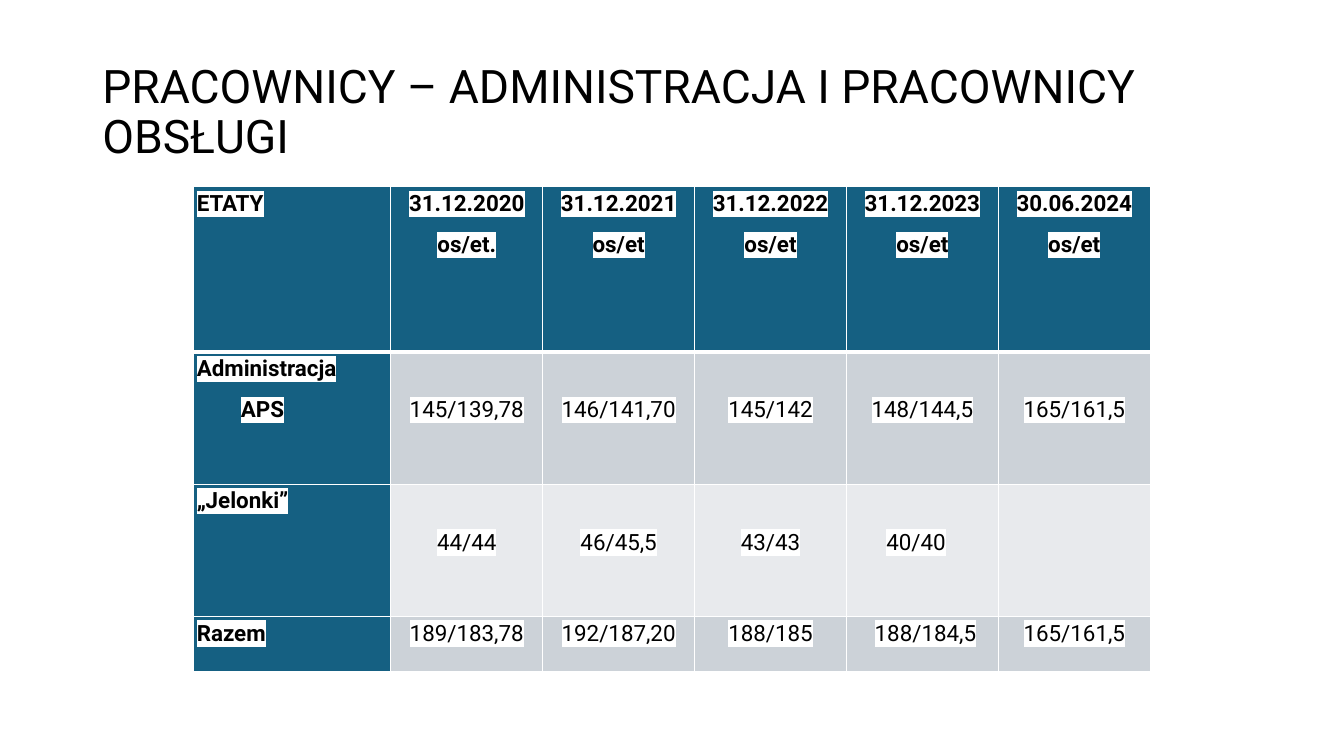
from dataclasses import dataclass

from lxml import etree
from pptx import Presentation
from pptx.dml.color import RGBColor
from pptx.enum import text as t
from pptx.oxml import ns
from pptx.util import Pt

WHITE = RGBColor(0xFF, 0xFF, 0xFF)
BLACK = RGBColor(0, 0, 0)
BLUE = RGBColor(0x15, 0x60, 0x82)
GREY = RGBColor(0xCC, 0xD2, 0xD8)
PALE = RGBColor(0xE8, 0xEA, 0xED)
FONT = "Roboto"
PAD = 2.2
DROP = 29.6  # one text line with the space after it


@dataclass
class Row:
    label: list[str]
    values: list[str]
    height: float
    fill: RGBColor
    bold: bool = False
    drop: float = 0


ROWS = [
    Row(["ETATY"], ["31.12.2020\nos/et.", "31.12.2021\nos/et", "31.12.2022\nos/et",
                    "31.12.2023\nos/et", "30.06.2024\nos/et"], 118, BLUE, bold=True),
    Row(["Administracja", "APS"],
        ["145/139,78", "146/141,70", "145/142", "148/144,5", "165/161,5"],
        94.5, GREY, drop=DROP),
    Row(["„Jelonki”"], ["44/44", "46/45,5", "43/43", "40/40", ""], 94.5, PALE, drop=DROP),
    Row(["Razem"], ["189/183,78", "192/187,20", "188/185", "188/184,5", "165/161,5"],
        39.5, GREY),
]
WIDTHS = [140.8] + [108.5] * 5
INDENTS = {"APS": 31.5, "188/184,5": 4.3}
RIGHTS = {"40/40": 9}


def style(para, size: float, bold: bool = False) -> None:
    font = para.font
    font.name, font.size, font.bold = FONT, Pt(size), bold
    font.color.rgb = BLACK


def add_fill(parent, tag: str, color: RGBColor):
    """Append an element that holds a plain colour."""
    node = etree.SubElement(parent, ns.qn(tag))
    if tag != "a:highlight":
        node = etree.SubElement(node, ns.qn("a:solidFill"))
    etree.SubElement(node, ns.qn("a:srgbClr"), val=str(color))


def add_lines(cell, top: float, bottom: float) -> None:
    """Give the cell white borders; call this before its fill is set."""
    props = cell._tc.get_or_add_tcPr()
    for side, width in zip("LRTB", (1, 1, top, bottom)):
        add_fill(props, f"a:ln{side}", WHITE)
        props[-1].set("w", str(Pt(width)))


def fill_cell(cell, lines: list[str], fill: RGBColor, bold: bool,
              align: t.PP_ALIGN, drop: float) -> None:
    cell.fill.solid()
    cell.fill.fore_color.rgb = fill
    cell.margin_left = Pt(PAD)
    cell.margin_right = Pt(PAD + RIGHTS.get(lines[0], 0))
    cell.margin_top, cell.margin_bottom = Pt(drop), 0
    frame = cell.text_frame
    for i, line in enumerate(lines):
        para = frame.paragraphs[0] if i == 0 else frame.add_paragraph()
        para.alignment = align
        para.line_spacing, para.space_after = 1.15, Pt(8)
        style(para, 16, bold)
        if line in INDENTS:
            para._p.get_or_add_pPr().set("marL", str(Pt(INDENTS[line])))
        if line:
            run = para.add_run()
            run.text = line
            add_fill(run._r.get_or_add_rPr(), "a:highlight", WHITE)


def add_title(slide) -> None:
    box = slide.shapes.add_textbox(Pt(66), Pt(28.8), Pt(828), Pt(104.4))
    frame = box.text_frame
    frame.word_wrap = True
    frame.vertical_anchor = t.MSO_ANCHOR.MIDDLE
    para = frame.paragraphs[0]
    para.text = "PRACOWNICY – ADMINISTRACJA I PRACOWNICY OBSŁUGI"
    para.line_spacing = 0.9
    style(para, 33)


def add_staff(slide) -> None:
    frame = slide.shapes.add_table(len(ROWS), len(WIDTHS), Pt(138.4), Pt(133.4),
                                   Pt(sum(WIDTHS)), Pt(sum(r.height for r in ROWS)))
    table = frame.table
    table.first_row = table.horz_banding = False
    for col, width in zip(table.columns, WIDTHS):
        col.width = Pt(width)
    for i, row in enumerate(ROWS):
        table.rows[i].height = Pt(row.height)
        for j in range(len(WIDTHS)):
            cell = table.cell(i, j)
            add_lines(cell, 3 if i == 1 else 1, 3 if i == 0 else 1)
            if j == 0:
                fill_cell(cell, row.label, BLUE, True, t.PP_ALIGN.LEFT, 0)
            else:
                fill_cell(cell, row.values[j - 1].split("\n"), row.fill, row.bold,
                          t.PP_ALIGN.CENTER, row.drop)


def main() -> None:
    deck = Presentation()
    deck.slide_width, deck.slide_height = Pt(960), Pt(540)
    slide = deck.slides.add_slide(deck.slide_layouts[6])
    add_title(slide)
    add_staff(slide)
    deck.save("out.pptx")


if __name__ == "__main__":
    main()
